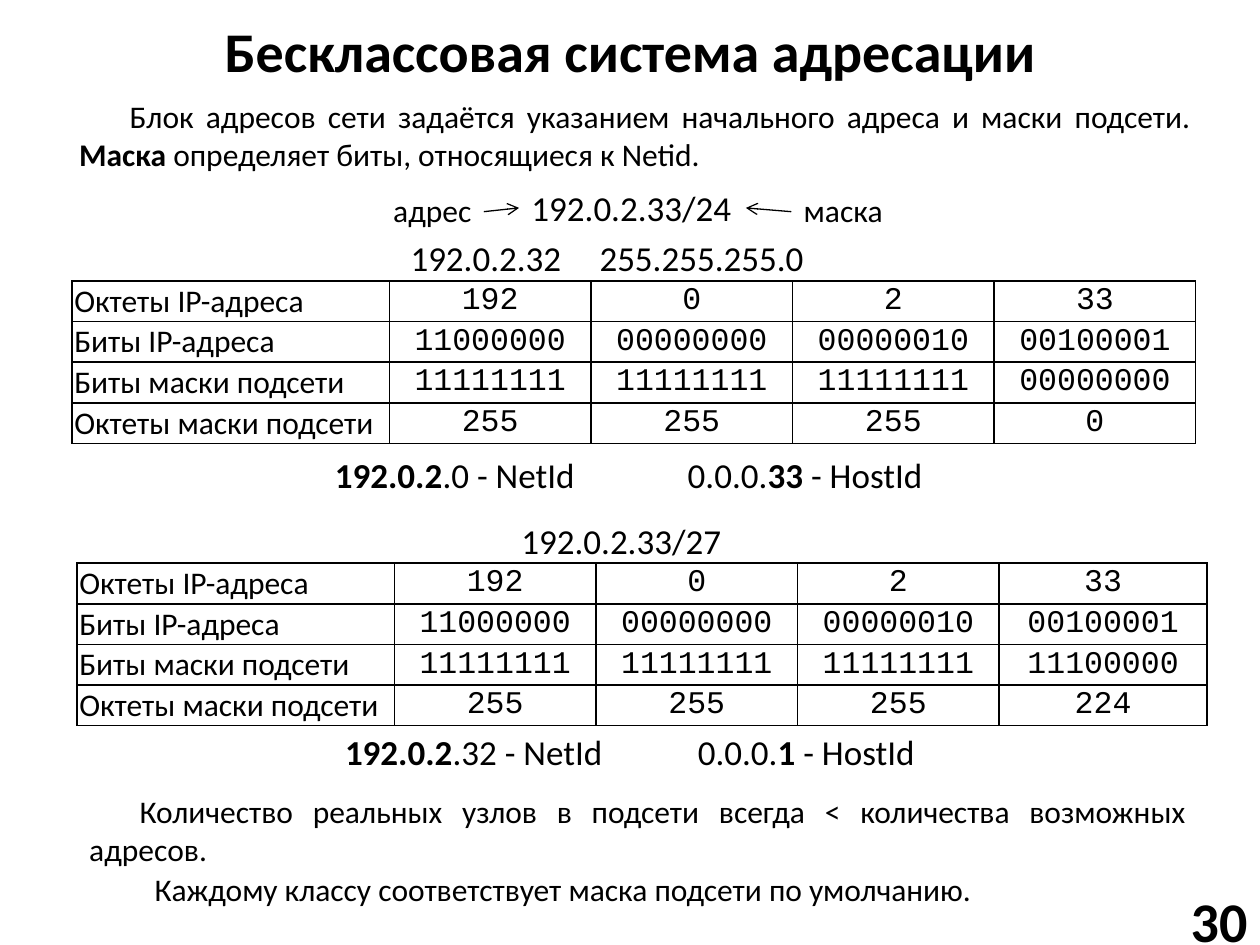
from lxml import etree
from pptx import Presentation
from pptx.dml.color import RGBColor
from pptx.enum.shapes import MSO_CONNECTOR
from pptx.enum.text import MSO_ANCHOR, PP_ALIGN
from pptx.oxml.ns import qn
from pptx.util import Inches, Pt

BLACK = RGBColor(0, 0, 0)
LEFT, MID, RIGHT, JUST = PP_ALIGN.LEFT, PP_ALIGN.CENTER, PP_ALIGN.RIGHT, PP_ALIGN.JUSTIFY
CENTER = MSO_ANCHOR.MIDDLE
STRAIGHT = MSO_CONNECTOR.STRAIGHT
HEAD = {"size": Pt(32), "name": "Calibri"}
BODY = {"size": Pt(18), "name": "Calibri"}
CODE = {"size": Pt(18), "name": "Courier New"}
LARGE = {"size": Pt(20), "name": "Calibri"}
INSETS = {
    "margin_left": Inches(0.02),
    "margin_right": Inches(0.02),
    "margin_top": Inches(0.01),
    "margin_bottom": Inches(0.01),
    "vertical_anchor": CENTER,
}
LABELS = ["Октеты IP-адреса", "Биты IP-адреса", "Биты маски подсети", "Октеты маски подсети"]
HOST = [192, 0, 2, 33]


def apply(item, values):
    """Set every attribute in a dict of format values."""
    for key, value in values.items():
        setattr(item, key, value)


def write(frame, text, style, align=LEFT, indent=0):
    """Fill a text frame with one paragraph, with bold parts between asterisks."""
    para = frame.paragraphs[0]
    para.alignment = align
    if indent:
        props = para._p.get_or_add_pPr()
        props.set("marL", "0")
        props.set("indent", str(Inches(indent)))
    for index, part in enumerate(text.split("*")):
        if part:
            run = para.add_run()
            run.text = part
            apply(run.font, {**style, "bold": index % 2 == 1})
            run.font.color.rgb = BLACK


def add_text(slide, box, text, style, align=LEFT, indent=0, wrap=True, anchor=None):
    """Place a text box."""
    frame = slide.shapes.add_textbox(*map(Inches, box)).text_frame
    apply(frame, {"word_wrap": wrap, "vertical_anchor": anchor})
    write(frame, text, style, align, indent)


def add_title(slide, box, text):
    """Place the slide title."""
    title = slide.shapes.title
    apply(title, dict(zip(("left", "top", "width", "height"), map(Inches, box))))
    title.text_frame.vertical_anchor = CENTER
    write(title.text_frame, f"*{text}*", HEAD, MID)


def add_arrow(slide, start, end):
    """Draw a thin arrow between two points."""
    line = slide.shapes.add_connector(STRAIGHT, *map(Inches, start + end))
    line.line.color.rgb = BLACK
    line.line.width = Pt(0.75)
    props = line._element.spPr
    etree.SubElement(props.find(qn("a:ln")), qn("a:tailEnd"), type="arrow")
    etree.SubElement(props, qn("a:effectLst"))


def add_border(cell):
    """Draw a black line on each side of a cell."""
    props = cell._tc.get_or_add_tcPr()
    for index, side in enumerate(("lnL", "lnR", "lnT", "lnB")):
        line = etree.Element(qn(f"a:{side}"), w=str(Pt(1)))
        fill = etree.SubElement(line, qn("a:solidFill"))
        etree.SubElement(fill, qn("a:srgbClr"), val=str(BLACK))
        props.insert(index, line)


def add_grid(slide, box, prefix):
    """Place the table of address and mask octets for a prefix length."""
    bits = "1" * prefix + "0" * (32 - prefix)
    mask = [int(bits[n:n + 8], 2) for n in range(0, 32, 8)]
    rows = [
        HOST,
        [f"{octet:08b}" for octet in HOST],
        [f"{octet:08b}" for octet in mask],
        mask,
    ]
    table = slide.shapes.add_table(4, 5, *map(Inches, box)).table
    apply(table, {"first_row": False, "horz_banding": False})
    widths = [2.52, 1.6, 1.6, 1.6]
    for column, width in zip(table.columns, widths + [box[2] - sum(widths)]):
        column.width = Inches(width)
    for r, (label, values) in enumerate(zip(LABELS, rows)):
        for c, value in enumerate([label, *values]):
            cell = table.cell(r, c)
            apply(cell, INSETS)
            cell.fill.background()
            add_border(cell)
            write(cell.text_frame, str(value), CODE if c else BODY, MID if c else LEFT)


def add_split(slide, box, net, host):
    """Place the network part and the host part side by side."""
    left, top, width, height = box
    for x, text in ((left, f"{net} - NetId"), (left + 2.8, f"{host} - HostId")):
        add_text(slide, (x, top, width, height), text, LARGE, wrap=False)


def add_notation(slide, box):
    """Place the labelled prefix notation with its address and mask."""
    left, top, width, height = box
    add_text(slide, (left + 1.96, top, 1.8, 0.44), "192.0.2.33/24", LARGE, wrap=False)
    add_text(slide, (left + 1, top + 0.4, 3.85, 0.44),
             "192.0.2.32\t255.255.255.0", LARGE, wrap=False)
    add_text(slide, (left, top + 0.04, 1.68, 0.4), "адрес", BODY, RIGHT)
    add_text(slide, (left + width - 1.68, top + 0.04, 1.68, 0.4), "маска", BODY)
    add_arrow(slide, (left + 1.68, top + 0.25), (left + 1.96, top + 0.22))
    add_arrow(slide, (left + width - 1.68, top + 0.25), (left + 3.76, top + 0.22))


def main():
    """Build and save the slide."""
    deck = Presentation()
    deck.slide_width, deck.slide_height = Inches(10), Inches(7.5)
    slide = deck.slides.add_slide(deck.slide_layouts[5])
    add_title(slide, (0.28, 0.05, 9.45, 0.69), "Бесклассовая система адресации")
    add_text(slide, (8.86, 7.1, 1.14, 0.4), "*30*", HEAD, RIGHT, anchor=CENTER)
    add_text(slide, (0.53, 0.72, 9.02, 0.71),
             "Блок адресов сети задаётся указанием начального адреса и маски подсети. "
             "*Маска* определяет биты, относящиеся к Netid.", BODY, JUST, 0.4)
    add_notation(slide, (2.16, 1.43, 5.8, 0.84))
    add_grid(slide, (0.57, 2.23, 8.92, 1.29), 24)
    add_split(slide, (2.56, 3.55, 2.11, 0.44), "*192.0.2*.0", "0.0.0.*33*")
    add_text(slide, (4.04, 4.07, 1.8, 0.44), "192.0.2.33/27", LARGE, wrap=False)
    add_grid(slide, (0.61, 4.47, 8.97, 1.29), 27)
    add_split(slide, (2.64, 5.75, 2.26, 0.44), "*192.0.2*.32", "0.0.0.*1*")
    add_text(slide, (0.61, 6.24, 8.9, 0.71),
             "Количество реальных узлов в подсети всегда < количества возможных адресов.",
             BODY, JUST, 0.4)
    add_text(slide, (0.73, 6.86, 8.9, 0.4),
             "Каждому классу соответствует маска подсети по умолчанию.", BODY, JUST, 0.4)
    deck.save("out.pptx")


if __name__ == "__main__":
    main()
